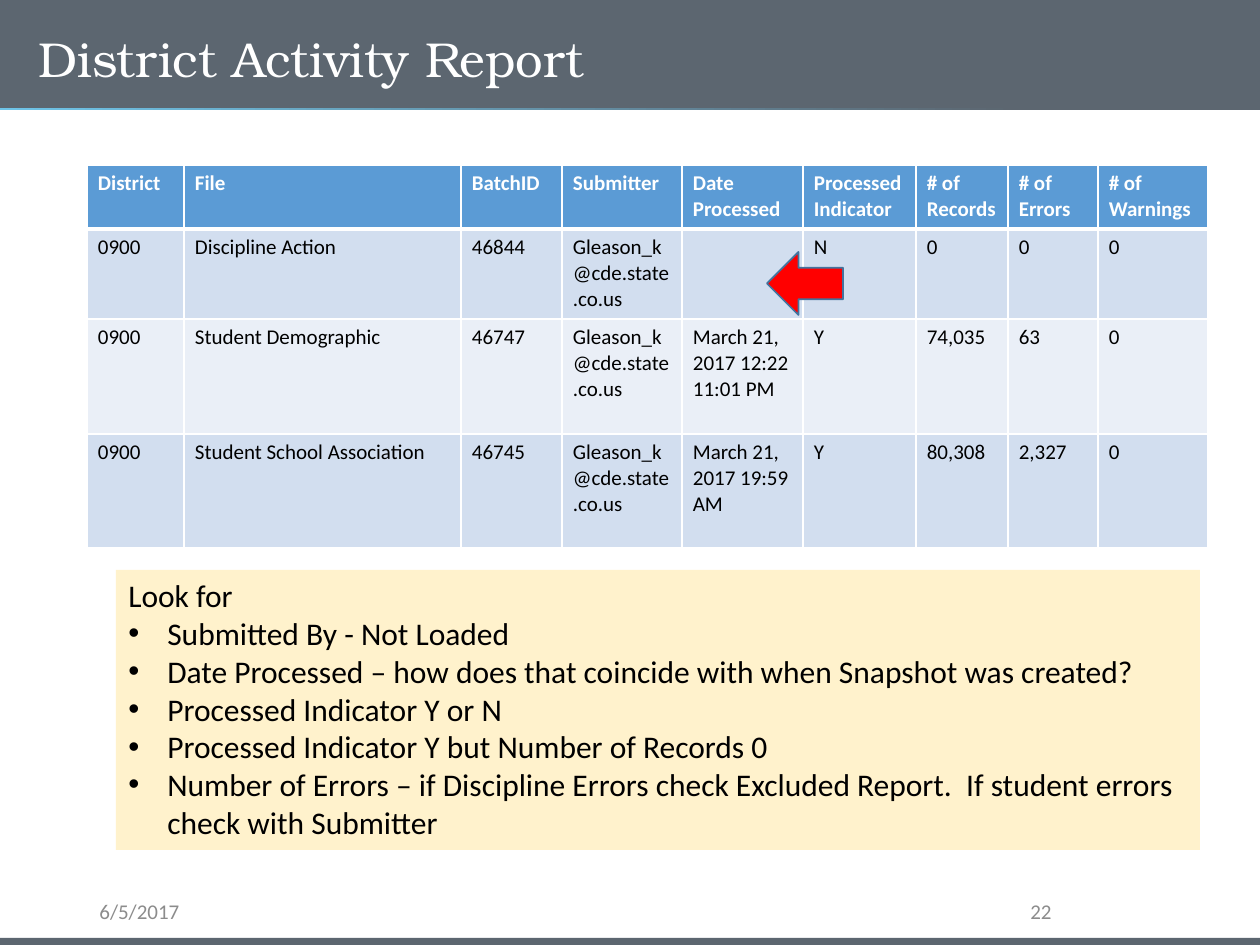
"""Build the District Activity Report slide."""
from lxml.etree import SubElement
from pptx import Presentation
from pptx.dml.color import RGBColor
from pptx.enum.shapes import MSO_SHAPE as Shape
from pptx.enum.text import MSO_ANCHOR as Anchor, PP_ALIGN as Align
from pptx.oxml.ns import qn
from pptx.util import Pt

PX = 914400 / 126
COLORS = {
    "sky": "6EC4E8", "slate": "5C6670", "white": "FFFFFF", "black": "000000",
    "gray": "8C8C8C", "header": "5B9BD5", "odd": "D2DEEF", "even": "EAEFF7",
    "cream": "FFF2CC", "red": "FF0000", "outline": "43739E",
}
TITLE = "District Activity Report"
SUBMITTER = "Gleason_k@cde.state.co.us"
REPORT = [
    ("District", "File", "BatchID", "Submitter", "Date Processed",
     "Processed Indicator", "# of Records", "# of Errors", "# of Warnings"),
    ("0900", "Discipline Action", "46844", SUBMITTER, "", "N", "0", "0", "0"),
    ("0900", "Student Demographic", "46747", SUBMITTER,
     "March 21, 2017 12:22 11:01 PM", "Y", "74,035", "63", "0"),
    ("0900", "Student School Association", "46745", SUBMITTER,
     "March 21, 2017 19:59 AM", "Y", "80,308", "2,327", "0"),
]
COLUMN_WIDTHS = (97, 277, 101, 120, 121, 113, 92, 90, 110)
ROW_HEIGHTS = (64, 90, 115, 114)
CHECKS_HEADING = "Look for"
CHECKS = [
    "Submitted By - Not Loaded",
    "Date Processed – how does that coincide with when Snapshot was created?",
    "Processed Indicator Y or N",
    "Processed Indicator Y but Number of Records 0",
    "Number of Errors – if Discipline Errors check Excluded Report.  "
    "If student errors check with Submitter",
]
BARS = [(0, 108, 10), (938, 10, 7)]
FOOTERS = [("6/5/2017", (87, 897, 284, 29), Align.LEFT),
           ("22", (890, 897, 174, 29), Align.RIGHT)]
CELL_MARGINS = {"margin_left": 11, "margin_right": 11, "margin_top": 6, "margin_bottom": 6}


def emu(px):
    return round(px * PX)


def rgb(name):
    return RGBColor.from_string(COLORS[name])


def paint(part, color):
    part.fill.solid()
    part.fill.fore_color.rgb = rgb(color)


def style(paragraph, color, size, name="Calibri", bold=False):
    for key, value in {"name": name, "size": Pt(size), "bold": bold}.items():
        setattr(paragraph.font, key, value)
    paragraph.font.color.rgb = rgb(color)


def add_block(slide, kind, box, color):
    block = slide.shapes.add_shape(kind, *map(emu, box))
    block.shadow.inherit = False
    block.line.fill.background()
    paint(block, color)
    return block


def add_label(slide, text, box, align, color, size, name="Calibri"):
    frame = slide.shapes.add_textbox(*map(emu, box)).text_frame
    frame.word_wrap = True
    frame.vertical_anchor = Anchor.MIDDLE
    label = frame.paragraphs[0]
    label.text = text
    label.alignment = align
    style(label, color, size, name)
    return label


def add_border(cell, side, width):
    properties = cell._tc.get_or_add_tcPr()
    edge = SubElement(properties, qn(f"a:ln{side}"), w=str(Pt(width)))
    fill = SubElement(edge, qn("a:solidFill"))
    SubElement(fill, qn("a:srgbClr"), val=COLORS["white"])


def add_report(slide):
    size = (sum(COLUMN_WIDTHS), sum(ROW_HEIGHTS))
    table = slide.shapes.add_table(len(REPORT), len(COLUMN_WIDTHS),
                                   *map(emu, (87, 165, *size))).table
    for column, width in zip(table.columns, COLUMN_WIDTHS):
        column.width = emu(width)
    for r, (row, height, values) in enumerate(zip(table.rows, ROW_HEIGHTS, REPORT)):
        row.height = emu(height)
        widths = {"L": 1, "R": 1, "T": 3 if r == 1 else 1, "B": 3 if r == 0 else 1}
        for cell, value in zip(row.cells, values):
            cell.text = value
            for key, margin in CELL_MARGINS.items():
                setattr(cell, key, emu(margin))
            for side, width in widths.items():
                add_border(cell, side, width)
            paint(cell, "header" if r == 0 else "odd" if r % 2 else "even")
            style(cell.text_frame.paragraphs[0], "black" if r else "white", 12, bold=r == 0)


def add_checks(slide):
    frame = add_block(slide, Shape.RECTANGLE, (116, 570, 1084, 280), "cream").text_frame
    frame.word_wrap = True
    frame.vertical_anchor = Anchor.TOP
    for i, text in enumerate([CHECKS_HEADING, *CHECKS]):
        line = frame.add_paragraph() if i else frame.paragraphs[0]
        line.text = text
        line.alignment = Align.LEFT
        if i:
            properties = line._p.get_or_add_pPr()
            properties.set("marL", str(emu(39)))
            properties.set("indent", str(emu(-39)))
            SubElement(properties, qn("a:buFont"), typeface="Arial")
            SubElement(properties, qn("a:buChar"), char="•")
        style(line, "black", 18)


def main():
    deck = Presentation()
    deck.slide_width, deck.slide_height = emu(1260), emu(945)
    slide = deck.slides.add_slide(deck.slide_layouts[6])

    banner = add_block(slide, Shape.RECTANGLE, (0, 0, 1260, 110), "sky")
    banner.fill.gradient()
    banner.fill.gradient_angle = 0
    for stop, color, position in zip(banner.fill.gradient_stops, ("sky", "slate"), (0, 0.81)):
        stop.color.rgb = rgb(color)
        stop.position = position
    for top, height, _ in BARS:
        add_block(slide, Shape.RECTANGLE, (0, top, 1260, height), "slate")
    for text, box, align in FOOTERS:
        add_label(slide, text, box, align, "gray", 12)

    add_report(slide)
    title = add_label(slide, TITLE, (26, 26, 1086, 72), Align.LEFT, "white", 28, "TeX Gyre Bonum")
    title.line_spacing = 0.9
    add_checks(slide)
    arrow = add_block(slide, Shape.LEFT_ARROW, (767, 252, 76, 63), "red")
    arrow.line.color.rgb = rgb("outline")
    arrow.line.width = Pt(1)
    deck.save("out.pptx")


if __name__ == "__main__":
    main()
